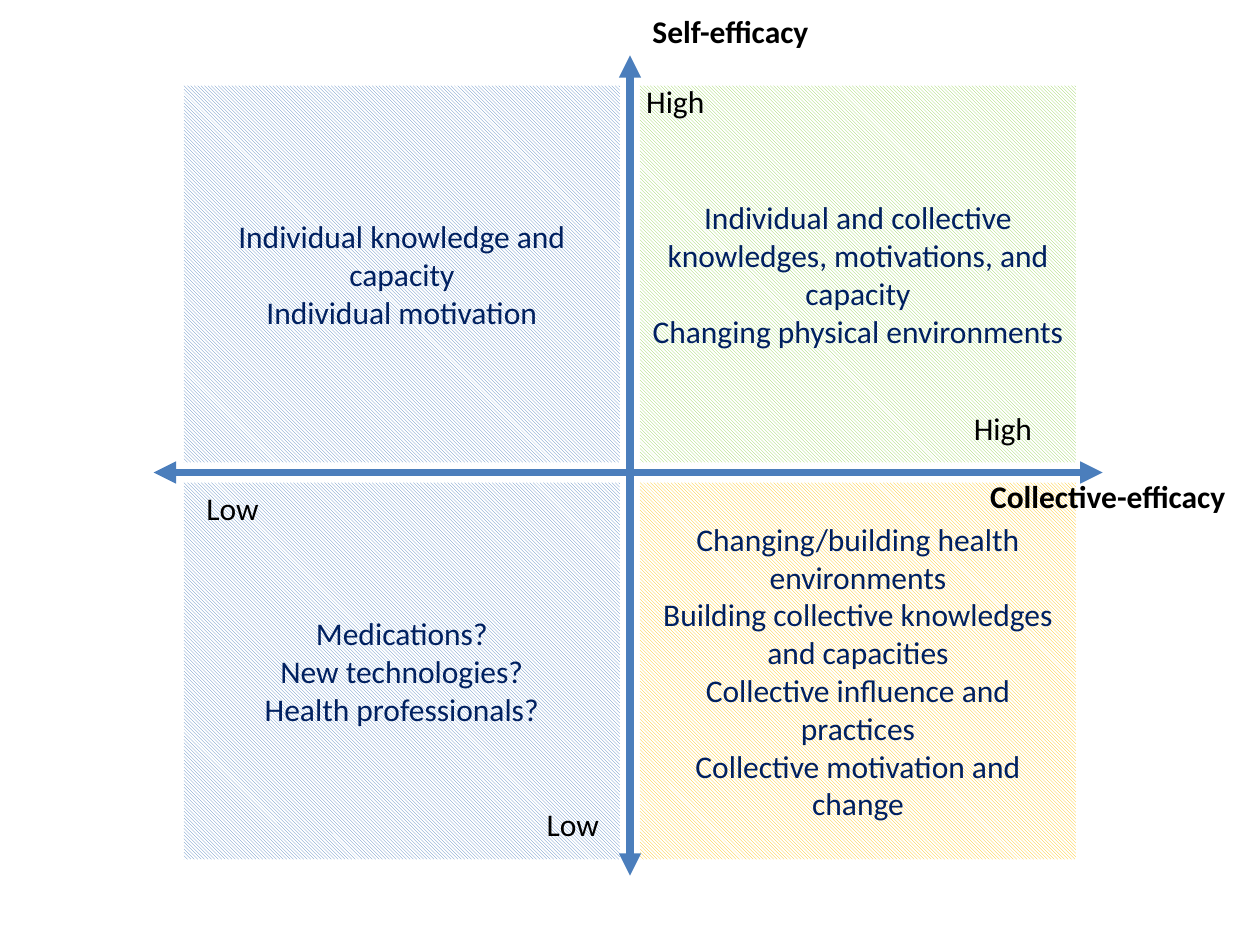
"""Build a four-quadrant slide of self-efficacy against collective-efficacy."""
from dataclasses import dataclass

from lxml import etree
from pptx import Presentation
from pptx import util as u
from pptx.dml.color import RGBColor
from pptx.enum import dml, shapes, text
from pptx.oxml.ns import qn


@dataclass(frozen=True)
class Theme:
    """Colours and type of the slide."""
    font: str = "Calibri"
    size: float = 18
    axis_width: float = 4.25
    axis: str = "4B7EBC"
    ink: str = "002060"
    label: str = "000000"
    paper: str = "FFFFFF"
    blue: str = "4F81BD"
    green: str = "92D050"
    amber: str = "FFC000"


@dataclass(frozen=True)
class Quadrant:
    """A hatched cell of the two-by-two grid."""
    col: int
    row: int
    hatch: str
    lines: tuple[str, ...]


@dataclass(frozen=True)
class Axis:
    """A double-headed arrow."""
    start: tuple[float, float]
    end: tuple[float, float]


@dataclass(frozen=True)
class Label:
    """A one-line caption beside an axis."""
    wording: str
    left: float
    top: float
    width: float
    bold: bool = False


THEME = Theme()
WIDTH, HEIGHT = 10, 7.5
MID_X, MID_Y = WIDTH / 2, HEIGHT / 2
CELL_W, CELL_H, HALF_GAP = 3.46, 2.99, 0.08
LABEL_H = 0.4

QUADRANTS = (
    Quadrant(0, 0, THEME.blue, (
        "Individual knowledge and capacity", "Individual motivation")),
    Quadrant(1, 0, THEME.green, (
        "Individual and collective knowledges, motivations, and capacity",
        "Changing physical environments")),
    Quadrant(0, 1, THEME.blue, (
        "Medications?", "New technologies?", "Health professionals?")),
    Quadrant(1, 1, THEME.amber, (
        "Changing/building health environments",
        "Building collective knowledges and capacities",
        "Collective influence and practices",
        "Collective motivation and change")),
)
AXES = (
    Axis((MID_X, 6.95), (MID_X, 0.44)),
    Axis((1.22, MID_Y), (8.75, MID_Y)),
)
LABELS = (
    Label("Self-efficacy", 5.08, 0.05, 1.47, True),
    Label("Collective-efficacy", 7.76, 3.74, 2.15, True),
    Label("High", 5.03, 0.6, 0.68),
    Label("High", 7.63, 3.2, 0.68),
    Label("Low", 4.24, 6.34, 0.62),
    Label("Low", 1.54, 3.83, 0.62),
)


def style_text(tf, color: str, align, bold: bool = False) -> None:
    """Format every run of a text frame."""
    for p in tf.paragraphs:
        p.alignment = align
        for r in p.runs:
            r.font.name = THEME.font
            r.font.size = u.Pt(THEME.size)
            r.font.bold = bold
            r.font.color.rgb = RGBColor.from_string(color)


def draw_quadrant(s, quadrant: Quadrant) -> None:
    """Draw a hatched cell with centred lines of text."""
    left = MID_X + HALF_GAP if quadrant.col else MID_X - HALF_GAP - CELL_W
    top = MID_Y + HALF_GAP if quadrant.row else MID_Y - HALF_GAP - CELL_H
    sp = s.shapes.add_shape(
        shapes.MSO_SHAPE.RECTANGLE,
        *map(u.Inches, (left, top, CELL_W, CELL_H)))
    sp.shadow.inherit = False
    sp.line.fill.background()
    sp.fill.patterned()
    sp.fill.pattern = dml.MSO_PATTERN.LIGHT_DOWNWARD_DIAGONAL
    sp.fill.fore_color.rgb = RGBColor.from_string(quadrant.hatch)
    sp.fill.back_color.rgb = RGBColor.from_string(THEME.paper)
    tf = sp.text_frame
    tf.word_wrap = True
    tf.vertical_anchor = text.MSO_ANCHOR.MIDDLE
    tf.text = "\n".join(quadrant.lines)
    style_text(tf, THEME.ink, text.PP_ALIGN.CENTER)


def draw_axis(s, axis: Axis) -> None:
    """Draw a line with a triangle at both ends."""
    sp = s.shapes.add_connector(
        shapes.MSO_CONNECTOR.STRAIGHT, *map(u.Inches, axis.start + axis.end))
    sp.line.color.rgb = RGBColor.from_string(THEME.axis)
    sp.line.width = u.Pt(THEME.axis_width)
    ln = sp.line._get_or_add_ln()
    for end in ("a:headEnd", "a:tailEnd"):
        etree.SubElement(ln, qn(end), type="triangle")
    etree.SubElement(sp._element.spPr, qn("a:effectLst"))


def draw_label(s, label: Label) -> None:
    """Draw an unwrapped caption."""
    sp = s.shapes.add_textbox(
        *map(u.Inches, (label.left, label.top, label.width, LABEL_H)))
    tf = sp.text_frame
    tf.word_wrap = False
    tf.auto_size = text.MSO_AUTO_SIZE.SHAPE_TO_FIT_TEXT
    tf.text = label.wording
    style_text(tf, THEME.label, text.PP_ALIGN.LEFT, label.bold)


def main() -> None:
    """Build and save the slide."""
    prs = Presentation()
    prs.slide_width, prs.slide_height = u.Inches(WIDTH), u.Inches(HEIGHT)
    s = prs.slides.add_slide(prs.slide_layouts.get_by_name("Blank"))
    for quadrant in QUADRANTS:
        draw_quadrant(s, quadrant)
    for axis in AXES:
        draw_axis(s, axis)
    for label in LABELS:
        draw_label(s, label)
    prs.save("out.pptx")


if __name__ == "__main__":
    main()
